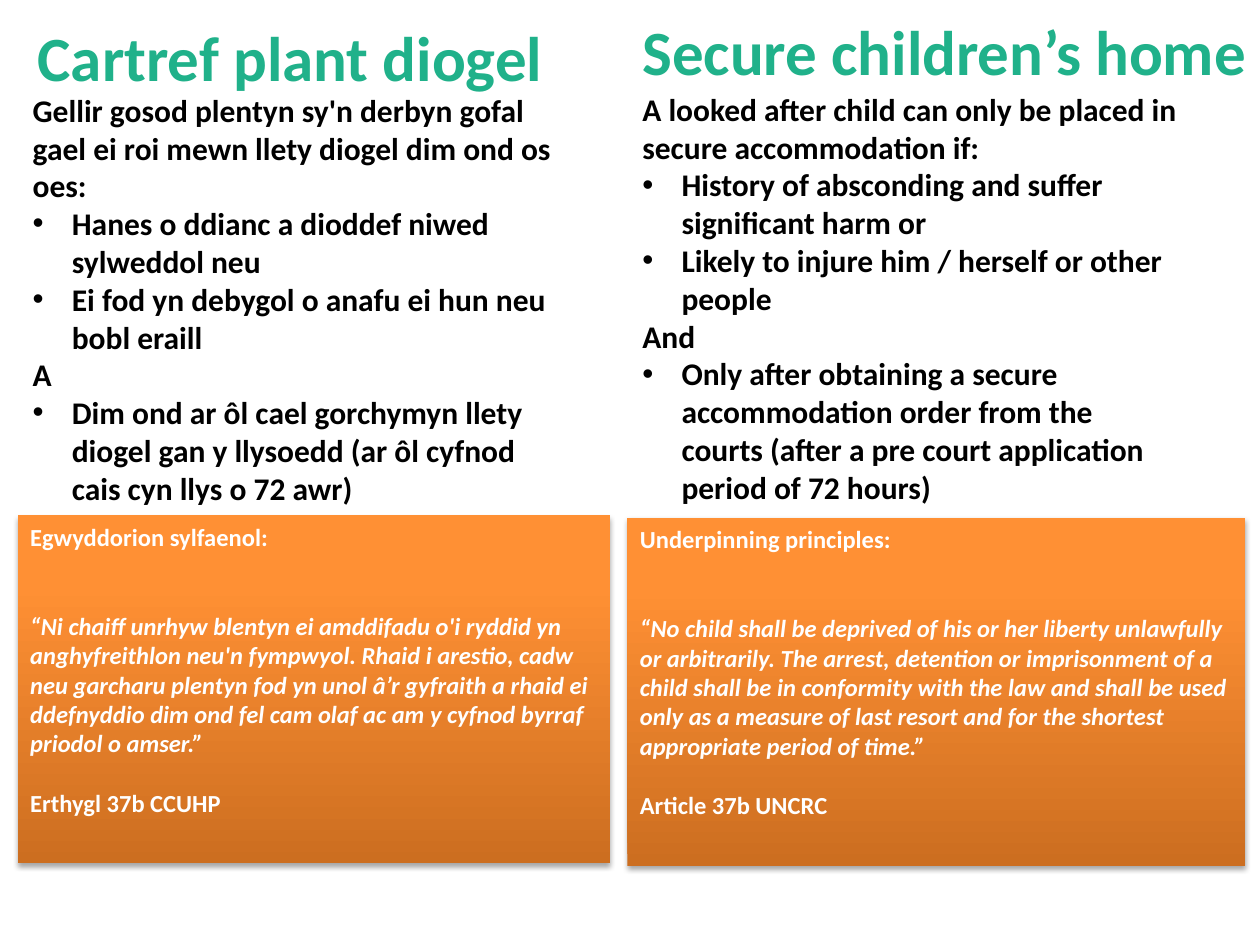
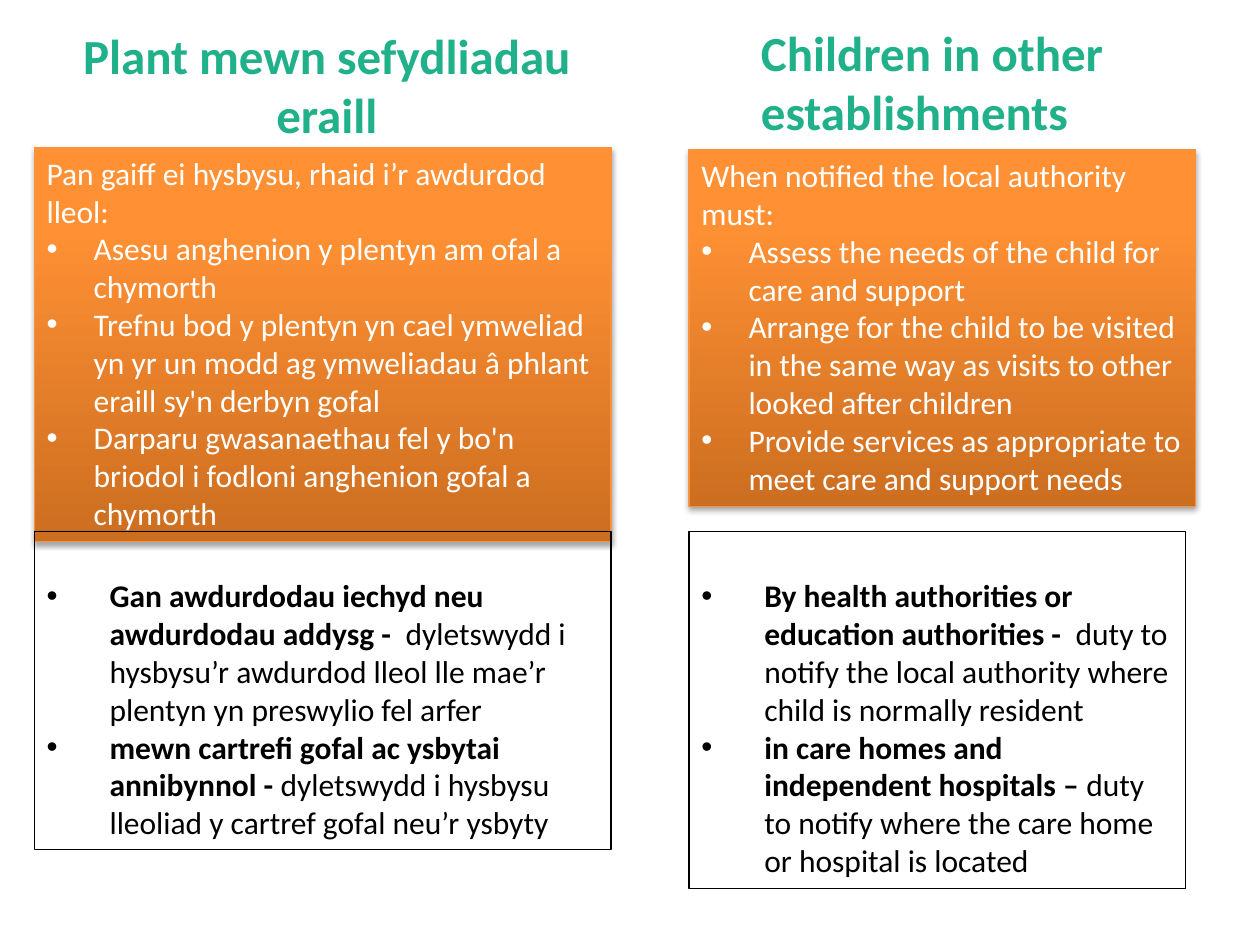
from copy import deepcopy
from pptx import Presentation
from pptx.dml.color import RGBColor as RGB
from pptx.enum.shapes import MSO_SHAPE as SHAPE
from pptx.enum.text import MSO_ANCHOR as ANCHOR, PP_ALIGN as ALIGN
from pptx.oxml.ns import qn
from pptx.util import Cm, Pt
from lxml.etree import SubElement as Sub

GREEN = RGB(0x20, 0xB1, 0x8A)
BLACK = RGB(0, 0, 0)
WHITE = RGB(0xFF, 0xFF, 0xFF)
EDGE = RGB(0xF6, 0x92, 0x40)
STOPS = [(0, RGB(0xCC, 0x6E, 0x20)), (0.8, RGB(0xFF, 0x90, 0x34)),
         (1, RGB(0xFF, 0x91, 0x36))]

# Content: each part is (style, place in cm, paragraphs).
# A paragraph is plain text, or a tuple of runs for a bulleted item.
HOMES = [
    ("quote", (0.36, 10.39, 11.94, 7.01), [
        "Egwyddorion sylfaenol:",
        "“Ni chaiff unrhyw blentyn ei amddifadu o'i ryddid yn anghyfreithlon "
        "neu'n fympwyol. Rhaid i arestio, cadw neu garcharu plentyn fod yn "
        "unol â’r gyfraith a rhaid ei ddefnyddio dim ond fel cam olaf ac am "
        "y cyfnod byrraf priodol o amser.”",
        "Erthygl 37b CCUHP"]),
    ("title", (0.51, 0.25, 16.03, 1.78), ["Cartref plant diogel"]),
    ("rules", (0.41, 1.7, 11.3, 8.64), [
        "Gellir gosod plentyn sy'n derbyn gofal gael ei roi mewn llety "
        "diogel dim ond os oes:",
        ("Hanes o ddianc a dioddef niwed sylweddol neu",),
        ("Ei fod yn debygol o anafu ei hun neu bobl eraill",),
        "A",
        ("Dim ond ar ôl cael gorchymyn llety diogel gan y llysoedd (ar ôl "
         "cyfnod cais cyn llys o 72 awr)",)]),
    ("quote", (12.65, 10.44, 12.45, 7.01), [
        "Underpinning principles:",
        "“No child shall be deprived of his or her liberty unlawfully or "
        "arbitrarily. The arrest, detention or imprisonment of a child shall "
        "be in conformity with the law and shall be used only as a measure "
        "of last resort and for the shortest appropriate period of time.”",
        "Article 37b UNCRC"]),
    ("title", (12.7, 0.13, 14.4, 1.8), ["Secure children’s home"]),
    ("rules", (12.7, 1.68, 11.3, 8.71), [
        "A looked after child can only be placed in secure accommodation if:",
        ("History of absconding and suffer significant harm or",),
        ("Likely to injure him / herself or other people",),
        "And",
        ("Only after obtaining a secure accommodation order from the courts "
         "(after a pre court application period of 72 hours)",)]),
]
OTHERS = [
    ("centred", (0.89, 0.38, 11.4, 2.64), ["Plant mewn sefydliadau eraill"]),
    ("duties", (0.69, 2.97, 11.63, 7.95), [
        "Pan gaiff ei hysbysu, rhaid i’r awdurdod lleol:",
        ("Asesu anghenion y plentyn am ofal a chymorth",),
        ("Trefnu bod y plentyn yn cael ymweliad yn yr un modd ag ymweliadau "
         "â phlant eraill sy'n derbyn gofal",),
        ("Darparu gwasanaethau fel y bo'n briodol i fodloni anghenion gofal "
         "a chymorth",)]),
    ("notice", (0.69, 10.72, 11.63, 6.4), [
        ("Gan awdurdodau iechyd neu awdurdodau addysg - ",
         " dyletswydd i hysbysu’r awdurdod lleol lle mae’r plentyn yn "
         "preswylio fel arfer"),
        ("mewn cartrefi gofal ac ysbytai annibynnol - ",
         "dyletswydd i hysbysu lleoliad y cartref gofal neu’r ysbyty")]),
    ("heading", (15.09, 0.33, 11.4, 2.64),
     ["Children in other establishments"]),
    ("duties", (13.89, 3.02, 10.21, 7.19), [
        "When notified the local authority must:",
        ("Assess the needs of the child for care and support",),
        ("Arrange for the child to be visited in the same way as visits to "
         "other looked after children",),
        ("Provide services as appropriate to meet care and support needs",)]),
    ("notice", (13.89, 10.72, 10.01, 7.19), [
        ("By health authorities or education authorities - ",
         " duty to notify the local authority where child is normally "
         "resident"),
        ("in care homes and independent hospitals – ",
         "duty to notify where the care home or hospital is located")]),
]

# Styles: font values, then options for the box and its paragraphs
HEAD = dict(size=Pt(28), bold=True, color=GREEN)
STYLES = {
    "title": (HEAD | dict(size=Pt(36)), {}),
    "heading": (HEAD, {}),
    "centred": (HEAD, dict(align=ALIGN.CENTER)),
    "rules": (dict(size=Pt(18), bold=True, color=BLACK), dict(indent=0.79)),
    "quote": (dict(size=Pt(14), bold=True, color=WHITE),
              dict(band=True, gaps=(0, 34, 17), slant=1)),
    "duties": (dict(size=Pt(18), bold=False, color=WHITE),
               dict(band=True, line=EDGE, indent=0.95)),
    "notice": (dict(size=Pt(18), bold=True, color=BLACK),
               dict(line=BLACK, indent=1.27, top=0.9)),
}


def shade(box):
    """Orange gradient with a soft shadow."""
    box.fill.gradient()
    box.fill.gradient_angle = 90
    props = box._element.spPr
    stops = props.xpath(".//a:gsLst")[0]
    stops.append(deepcopy(stops[-1]))
    for stop, (pos, tint) in zip(box.fill.gradient_stops, STOPS):
        stop.position = pos
        stop.color.rgb = tint
    glow = Sub(props.find(qn("a:effectLst")), qn("a:outerShdw"),
               blurRad=str(Pt(3.1)), dist=str(Pt(1.8)), dir="5400000",
               rotWithShape="0")
    tone = Sub(glow, qn("a:srgbClr"), val="000000")
    Sub(tone, qn("a:alpha"), val="35000")


def add_box(slide, place, opts):
    spot = [Cm(n) for n in place]
    if not (opts.get("band") or opts.get("line")):
        return slide.shapes.add_textbox(*spot)
    box = slide.shapes.add_shape(SHAPE.RECTANGLE, *spot)
    box.shadow.inherit = False
    if opts.get("band"):
        shade(box)
    else:
        box.fill.background()
    if "line" in opts:
        box.line.color.rgb = opts["line"]
        box.line.width = Pt(0.75)
    else:
        box.line.fill.background()
    return box


def set_bullet(para, indent):
    props = para._p.get_or_add_pPr()
    props.set("marL", str(Cm(indent)))
    props.set("indent", str(-Cm(indent)))
    Sub(props, qn("a:buFont"), typeface="Arial")
    Sub(props, qn("a:buChar"), char="•")


def add_run(para, text, look):
    run = para.add_run()
    run.text = text
    run.font.name = "Calibri"
    for key, value in look.items():
        if key == "color":
            run.font.color.rgb = value
        else:
            setattr(run.font, key, value)


def add_part(slide, style, place, paras):
    look, opts = STYLES[style]
    frame = add_box(slide, place, opts).text_frame
    frame.word_wrap = True
    frame.vertical_anchor = ANCHOR.TOP
    frame.margin_top = Cm(opts.get("top", 0.13))
    for i, item in enumerate(paras):
        para = frame.add_paragraph() if i else frame.paragraphs[0]
        para.alignment = opts.get("align", ALIGN.LEFT)
        if isinstance(item, tuple):
            set_bullet(para, opts["indent"])
        else:
            item = (item,)
        if i and "gaps" in opts:
            para.space_before = Pt(opts["gaps"][i])
        for j, text in enumerate(item):
            # Only the first run of an item keeps the bold of its style
            extra = dict(bold=look["bold"] and j == 0,
                         italic=opts.get("slant") == i)
            add_run(para, text, look | extra)


def main():
    deck = Presentation()
    deck.slide_width, deck.slide_height = Cm(25.4), Cm(19.05)
    for parts in (HOMES, OTHERS):
        slide = deck.slides.add_slide(deck.slide_layouts[6])
        for part in parts:
            add_part(slide, *part)
    deck.save("out.pptx")


if __name__ == "__main__":
    main()
